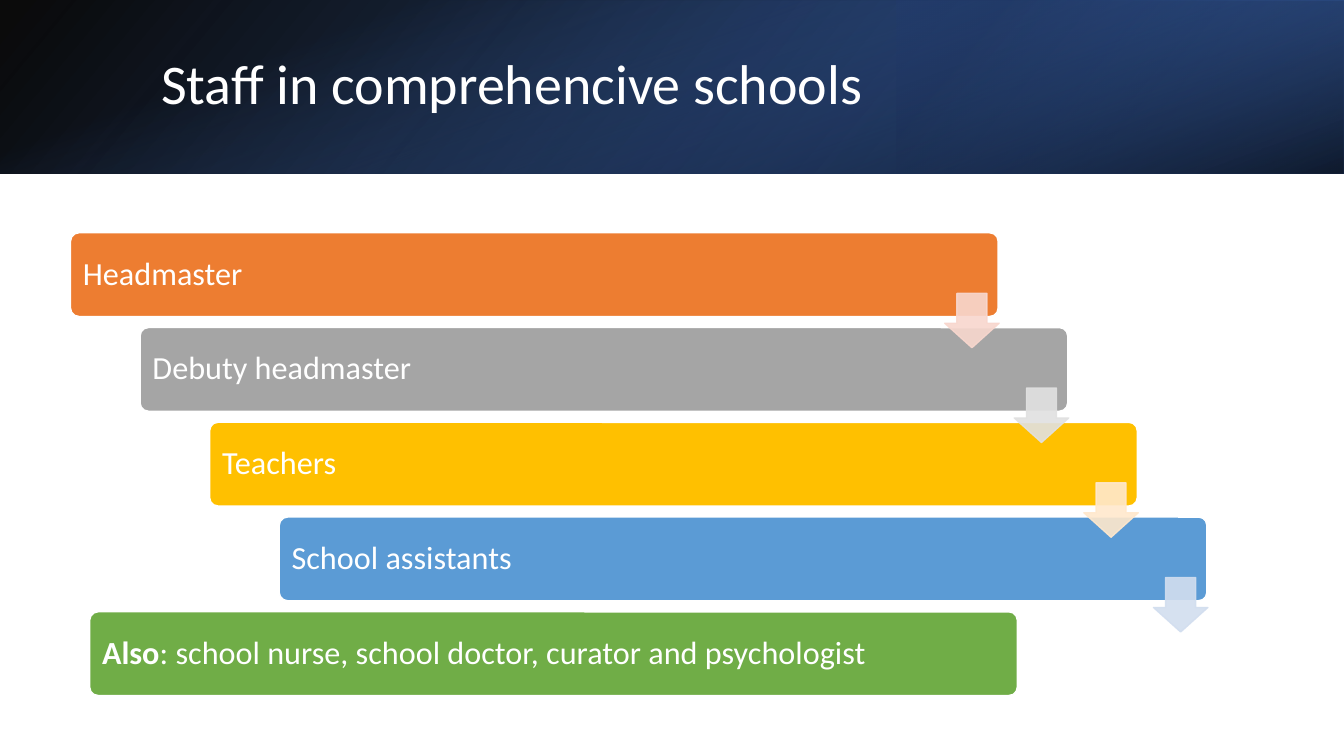
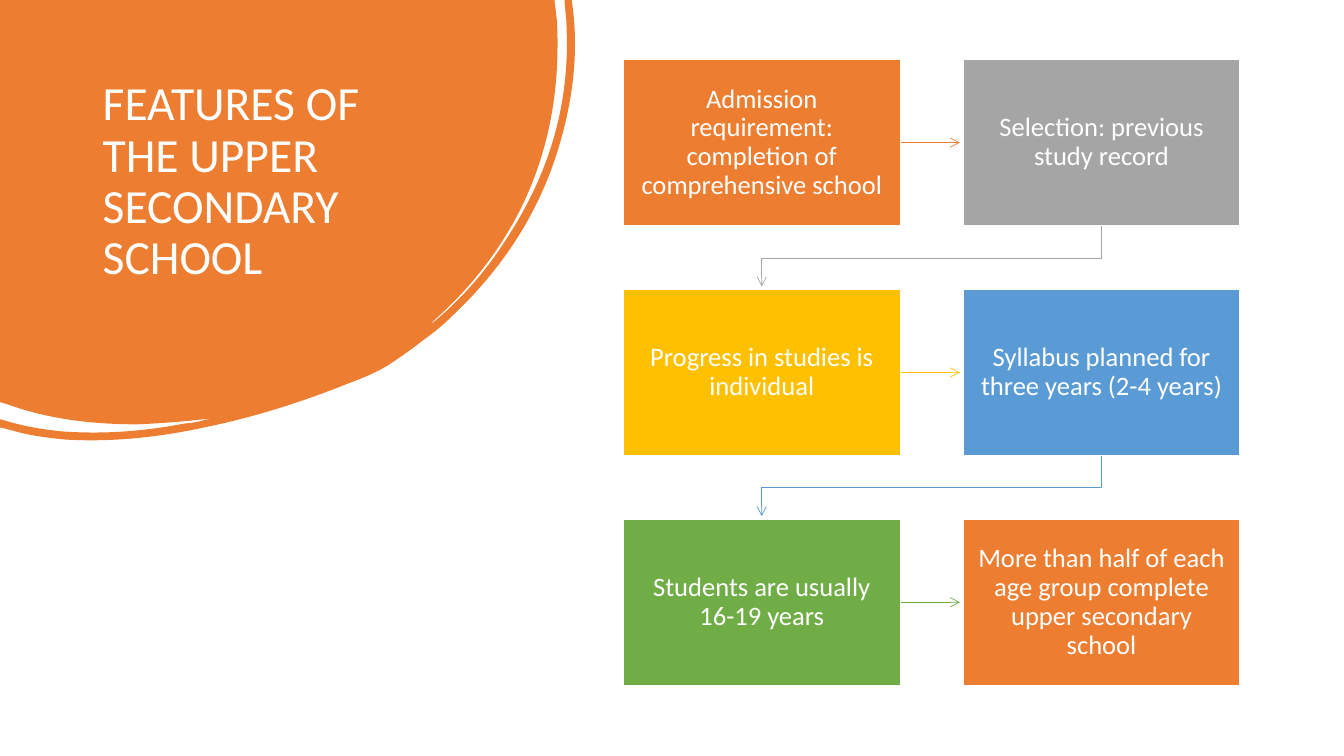
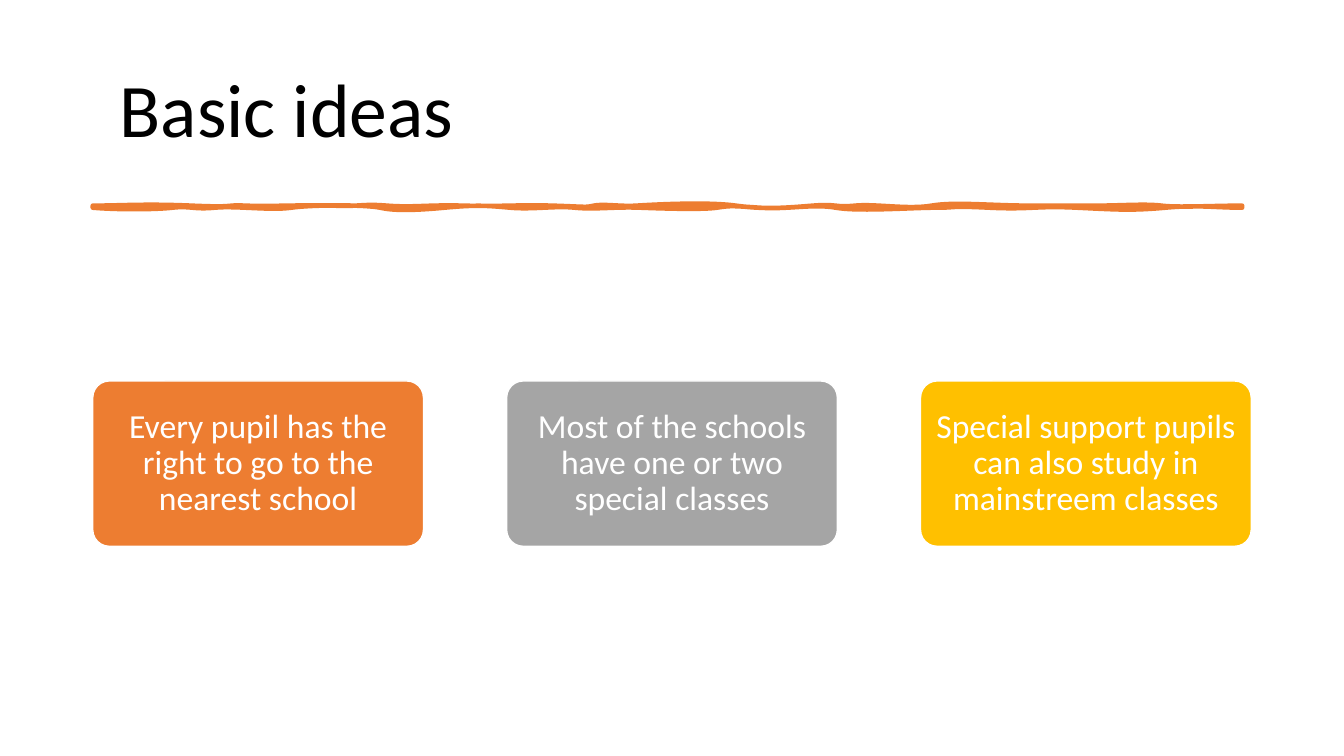
from dataclasses import dataclass

from lxml import etree
from pptx import Presentation
from pptx.dml.color import RGBColor
from pptx.enum.shapes import MSO_SHAPE
from pptx.enum.text import MSO_ANCHOR, PP_ALIGN
from pptx.oxml.ns import qn
from pptx.presentation import Presentation as Deck
from pptx.shapes.autoshape import Shape
from pptx.slide import Slide
from pptx.text.text import TextFrame
from pptx.util import Inches, Pt

RECTANGLE = MSO_SHAPE.RECTANGLE
ROUNDED = MSO_SHAPE.ROUNDED_RECTANGLE
DOWN_ARROW = MSO_SHAPE.DOWN_ARROW
TOP, MIDDLE = MSO_ANCHOR.TOP, MSO_ANCHOR.MIDDLE
LEFT, CENTER = PP_ALIGN.LEFT, PP_ALIGN.CENTER

FONT = "Calibri"
WHITE = RGBColor(0xFF, 0xFF, 0xFF)
BLACK = RGBColor(0x00, 0x00, 0x00)
ORANGE = RGBColor(0xED, 0x7D, 0x31)
GRAY = RGBColor(0xA5, 0xA5, 0xA5)
GOLD = RGBColor(0xFF, 0xC0, 0x00)
BLUE = RGBColor(0x5B, 0x9B, 0xD5)
GREEN = RGBColor(0x70, 0xAD, 0x47)
ROYAL = RGBColor(0x44, 0x72, 0xC4)
DEEP_BLUE = RGBColor(0x2F, 0x55, 0x97)
NAVY = RGBColor(0x20, 0x38, 0x64)
PALE_ORANGE = RGBColor(0xF8, 0xD7, 0xCE)
PALE_GRAY = RGBColor(0xE1, 0xE1, 0xE1)
PALE_GOLD = RGBColor(0xFF, 0xE8, 0xCC)
PALE_BLUE = RGBColor(0xD2, 0xDE, 0xEF)

SLIDE_WIDTH, SLIDE_HEIGHT = 13.33, 7.5
BAND_HEIGHT = 1.72

# A segment is a line (x, y) or a cubic curve (x1, y1, x2, y2, x, y)
Segment = tuple[float, ...]


@dataclass(frozen=True)
class Area:
    left: float
    top: float
    width: float
    height: float


@dataclass(frozen=True)
class Stop:
    position: float
    color: RGBColor
    opacity: int


@dataclass(frozen=True)
class GradientBand:
    area: Area
    start: Stop
    end: Stop
    angle: int
    rotation: int = 0
    flipped: bool = True


@dataclass(frozen=True)
class TextStyle:
    size: int
    color: RGBColor = WHITE
    align: PP_ALIGN = LEFT
    anchor: MSO_ANCHOR = MIDDLE
    margin_x: float = 0.1
    margin_y: float = 0.05


@dataclass(frozen=True)
class Card:
    text: str
    color: RGBColor
    bold_lead: str = ""


STAFF_STYLE = TextStyle(23, margin_y=0.1)
FEATURE_STYLE = TextStyle(19, align=CENTER, margin_x=0.13, margin_y=0.14)
IDEA_STYLE = TextStyle(24, align=CENTER, margin_x=0.05, margin_y=0.03)

BANDS = (
    GradientBand(Area(0, 0, SLIDE_WIDTH, BAND_HEIGHT),
                 Stop(0, BLACK, 96), Stop(1, DEEP_BLUE, 100), 140),
    GradientBand(Area(8.89, 0, 4.44, BAND_HEIGHT),
                 Stop(0.19, NAVY, 68), Stop(1, ROYAL, 79), 320, rotation=180),
    GradientBand(Area(5.8, -5.8, BAND_HEIGHT, SLIDE_WIDTH),
                 Stop(0.23, ROYAL, 0), Stop(0.99, BLACK, 74), 340,
                 rotation=90, flipped=False),
)

STAFF = (
    Card("Headmaster", ORANGE),
    Card("Debuty headmaster", GRAY),
    Card("Teachers", GOLD),
    Card("School assistants", BLUE),
)
ALSO = Card(": school nurse, school doctor, curator and psychologist", GREEN, "Also")
ARROW_COLORS = (PALE_ORANGE, PALE_GRAY, PALE_GOLD, PALE_BLUE)

FEATURES = (
    Card("Admission requirement: completion of comprehensive school", ORANGE),
    Card("Selection: previous study record", GRAY),
    Card("Progress in studies is individual", GOLD),
    Card("Syllabus planned for three years (2-4 years)", BLUE),
    Card("Students are usually 16-19 years", GREEN),
    Card("More than half of each age group complete upper secondary school", ORANGE),
)

IDEAS = (
    Card("Every pupil has the right to go to the nearest school", ORANGE),
    Card("Most of the schools have one or two special classes", GRAY),
    Card("Special support pupils can also study in mainstreem classes", GOLD),
)

BLOB_AREA = Area(0, 0, 5.71, 4.37)
BLOB: tuple[Segment, ...] = (
    (0, 0), (5.5, 0), (5.52, 0.17),
    (5.53, 0.26, 5.53, 0.36, 5.53, 0.45), (5.53, 1.01, 5.42, 1.54, 5.18, 2.04),
    (4.96, 2.49, 4.65, 2.88, 4.27, 3.21), (4.29, 3.21, 4.3, 3.19, 4.32, 3.18),
    (4.59, 2.95, 4.82, 2.69, 5.01, 2.39), (5.43, 1.76, 5.65, 1.07, 5.62, 0.3),
    (5.62, 0.21, 5.61, 0.12, 5.6, 0.03), (5.6, 0), (5.67, 0), (5.68, 0.07),
    (5.74, 0.54, 5.68, 1.02, 5.53, 1.5), (5.33, 2.14, 4.97, 2.68, 4.48, 3.14),
    (4.39, 3.23, 4.29, 3.31, 4.19, 3.38), (4.09, 3.46, 3.99, 3.53, 3.87, 3.61),
    (3.75, 3.69, 3.6, 3.75, 3.44, 3.81), (2.99, 3.99, 2.52, 4.14, 2.03, 4.24),
    (1.57, 4.34, 1.1, 4.39, 0.63, 4.36), (0.45, 4.34, 0.28, 4.32, 0.12, 4.27),
    (0, 4.24), (0, 4.16), (0.04, 4.17),
    (0.23, 4.23, 0.42, 4.26, 0.61, 4.28), (1.03, 4.31, 1.43, 4.28, 1.84, 4.2),
    (1.89, 4.2, 1.93, 4.19, 1.98, 4.18), (2.02, 4.17, 2.06, 4.16, 2.1, 4.15),
    (1.86, 4.18, 1.61, 4.2, 1.36, 4.21), (0.92, 4.21, 0.48, 4.16, 0.07, 4.01),
    (0, 3.99),
)

BRUSH_AREA = Area(0.92, 2.04, 11.4, 0.02)
BRUSH_STROKE: tuple[Segment, ...] = (
    (0.92, 2.04),
    (1.19, 2.04, 1.44, 2.02, 1.9, 2.04), (2.37, 2.06, 2.2, 2.03, 2.44, 2.04),
    (2.67, 2.05, 3.03, 2.03, 3.31, 2.04), (3.6, 2.05, 3.59, 2.02, 3.84, 2.04),
    (4.1, 2.06, 4.23, 2.03, 4.6, 2.04), (4.98, 2.05, 5.14, 2.03, 5.48, 2.04),
    (5.81, 2.05, 5.81, 2.06, 5.89, 2.04), (5.98, 2.02, 6.15, 2.05, 6.31, 2.04),
    (6.47, 2.03, 7.01, 2, 7.3, 2.04), (7.59, 2.08, 7.81, 2.06, 8.06, 2.04),
    (8.31, 2.02, 8.27, 2.06, 8.48, 2.04), (8.68, 2.02, 9.01, 2.08, 9.24, 2.04),
    (9.47, 2, 9.82, 2.04, 10.23, 2.04), (10.63, 2.04, 10.63, 2.04, 10.87, 2.04),
    (11.12, 2.04, 11.36, 2.02, 11.52, 2.04), (11.68, 2.06, 12.03, 2.04, 12.32, 2.04),
    (12.32, 2.05, 12.32, 2.05, 12.32, 2.06),
    (12.05, 2.06, 11.89, 2.03, 11.56, 2.06), (11.22, 2.09, 11.1, 2.08, 10.68, 2.06),
    (10.27, 2.04, 10.23, 2.08, 9.81, 2.06), (9.39, 2.04, 9.52, 2.06, 9.28, 2.06),
    (9.04, 2.06, 8.51, 2.1, 8.29, 2.06), (8.06, 2.02, 7.82, 2.08, 7.53, 2.06),
    (7.24, 2.04, 7.25, 2.04, 7.11, 2.06), (6.98, 2.08, 6.61, 2.07, 6.35, 2.06),
    (6.09, 2.05, 5.9, 2.08, 5.7, 2.06), (5.51, 2.04, 5.28, 2.08, 5.06, 2.06),
    (4.83, 2.04, 4.73, 2.03, 4.41, 2.06), (4.09, 2.09, 3.9, 2.09, 3.77, 2.06),
    (3.63, 2.03, 3.1, 2.03, 2.89, 2.06), (2.68, 2.09, 2.35, 2.04, 2.13, 2.06),
    (1.92, 2.08, 1.89, 2.04, 1.71, 2.06), (1.54, 2.08, 1.14, 2.08, 0.92, 2.06),
    (0.92, 2.05, 0.92, 2.05, 0.92, 2.04),
)


# Shared drawing tools
def add_page(deck: Deck) -> Slide:
    return deck.slides.add_slide(deck.slide_layouts[6])


def write_text(frame: TextFrame, text: str, style: TextStyle, bold_lead: str = "") -> None:
    frame.word_wrap = True
    frame.vertical_anchor = style.anchor
    frame.margin_left = frame.margin_right = Inches(style.margin_x)
    frame.margin_top = frame.margin_bottom = Inches(style.margin_y)
    para = frame.paragraphs[0]
    para.alignment = style.align
    para.line_spacing = 0.9
    para.font.name = FONT
    para.font.size = Pt(style.size)
    para.font.color.rgb = style.color
    if bold_lead:
        span = para.add_run()
        span.text = bold_lead
        span.font.bold = True
    para.add_run().text = text


def add_title(page: Slide, text: str, area: Area, style: TextStyle) -> None:
    box = page.shapes.add_textbox(Inches(area.left), Inches(area.top),
                                  Inches(area.width), Inches(area.height))
    write_text(box.text_frame, text, style)


def add_shape(page: Slide, kind: MSO_SHAPE, area: Area) -> Shape:
    shape = page.shapes.add_shape(kind, Inches(area.left), Inches(area.top),
                                  Inches(area.width), Inches(area.height))
    shape.shadow.inherit = False
    return shape


def paint(shape: Shape, fill: RGBColor, line: RGBColor, line_width: float = 1) -> None:
    shape.fill.solid()
    shape.fill.fore_color.rgb = fill
    shape.line.color.rgb = line
    shape.line.width = Pt(line_width)


def set_opacity(shape: Shape, *percents: int) -> None:
    colors = shape._element.spPr.iter(qn("a:srgbClr"))
    for color, percent in zip(list(colors), percents):
        etree.SubElement(color, qn("a:alpha")).set("val", str(percent * 1000))


def add_card(page: Slide, kind: MSO_SHAPE, area: Area, card: Card, style: TextStyle) -> None:
    box = add_shape(page, kind, area)
    if kind == ROUNDED:
        box.adjustments[0] = 0.1
    paint(box, card.color, WHITE)
    write_text(box.text_frame, card.text, style, card.bold_lead)


def add_outline(page: Slide, segments: tuple[Segment, ...], area: Area,
                closed: bool = True) -> Shape:
    """Draw lines and cubic curves in a frame of the given area."""
    start, *rest = [(Inches(segment[-2]), Inches(segment[-1])) for segment in segments]
    builder = page.shapes.build_freeform(*start)
    builder.add_line_segments(rest, close=closed)
    shape = builder.convert_to_shape()
    shape.shadow.inherit = False
    shape.left, shape.top = Inches(area.left), Inches(area.top)
    shape.width, shape.height = Inches(area.width), Inches(area.height)

    # Rewrite the commands so that curves stay curves
    outline = next(shape._element.spPr.iter(qn("a:path")))
    outline.set("w", str(shape.width))
    outline.set("h", str(shape.height))
    for command, segment in zip(list(outline), segments):
        if len(segment) == 6:
            command.tag = qn("a:cubicBezTo")
        for point in list(command):
            command.remove(point)
        for x, y in zip(segment[::2], segment[1::2]):
            point = etree.SubElement(command, qn("a:pt"))
            point.set("x", str(Inches(x) - shape.left))
            point.set("y", str(Inches(y) - shape.top))
    return shape


# Staff slide
def add_band(page: Slide, band: GradientBand) -> None:
    shape = add_shape(page, RECTANGLE, band.area)
    shape.rotation = band.rotation
    if band.flipped:
        shape._element.spPr.xfrm.set("flipH", "1")
    shape.fill.gradient()
    shape.fill.gradient_angle = 360 - band.angle
    for stop, wanted in zip(shape.fill.gradient_stops, (band.start, band.end)):
        stop.position = wanted.position
        stop.color.rgb = wanted.color
    set_opacity(shape, band.start.opacity, band.end.opacity)
    shape.line.fill.background()


def build_staff(deck: Deck) -> None:
    page = add_page(deck)
    for band in BANDS:
        add_band(page, band)
    add_title(page, "Staff in comprehencive schools", Area(1.5, 0.38, 10.98, 0.96),
              TextStyle(40))

    # Stepped bars, then the arrows on top of them
    steps = [(0.7 + 0.69 * row, 2.31 + 0.94 * row) for row in range(len(STAFF))]
    places = [*steps, (0.89, 6.07)]
    for card, (left, top) in zip((*STAFF, ALSO), places):
        add_card(page, ROUNDED, Area(left, top, 9.2, 0.83), card, STAFF_STYLE)
    for color, (left, top) in zip(ARROW_COLORS, steps):
        arrow = add_shape(page, DOWN_ARROW, Area(left + 8.67, top + 0.6, 0.54, 0.54))
        arrow.adjustments[0] = 0.55
        arrow.adjustments[1] = 0.45
        paint(arrow, color, color)
        set_opacity(arrow, 90, 90)


# Upper secondary school slide
def add_flow_arrow(page: Slide, corners: tuple[Segment, ...], area: Area,
                   color: RGBColor) -> None:
    arrow = add_outline(page, corners, area, closed=False)
    arrow.fill.background()
    arrow.line.color.rgb = color
    arrow.line.width = Pt(0.5)
    line = arrow._element.spPr.find(qn("a:ln"))
    etree.SubElement(line, qn("a:tailEnd")).set("type", "arrow")


def build_features(deck: Deck) -> None:
    page = add_page(deck)
    blob = add_outline(page, BLOB, BLOB_AREA)
    blob.fill.solid()
    blob.fill.fore_color.rgb = ORANGE
    blob.line.fill.background()
    add_title(page, "FEATURES OF THE UPPER SECONDARY SCHOOL", Area(0.92, 0.74, 3.52, 2.22),
              TextStyle(34, anchor=TOP))

    # Two columns of boxes, each leading to the next
    width, height = 2.75, 1.65
    lefts = (6.18, 9.55)
    row_pitch, reach = 2.28, 0.6
    for index, card in enumerate(FEATURES):
        row, column = divmod(index, 2)
        left, top = lefts[column], 0.59 + row * row_pitch
        bottom = top + height
        if column == 0:
            start, middle = left + width - 0.01, top + height / 2
            add_flow_arrow(page, ((start, middle), (start + reach, middle)),
                           Area(start, middle - 0.05, reach, 0.1), card.color)
        elif index < len(FEATURES) - 1:
            start, end = left + width / 2, lefts[0] + width / 2
            bend = bottom + 0.32
            add_flow_arrow(page, ((start, bottom), (start, bend), (end, bend),
                                  (end, bottom + reach)),
                           Area(end, bottom, start - end, reach), card.color)
        add_card(page, RECTANGLE, Area(left, top, width, height), card, FEATURE_STYLE)


# Basic ideas slide
def build_ideas(deck: Deck) -> None:
    page = add_page(deck)
    add_title(page, "Basic ideas", Area(1.09, 0.4, 11.33, 1.45), TextStyle(54, BLACK))
    paint(add_outline(page, BRUSH_STROKE, BRUSH_AREA), ORANGE, ORANGE, 3.25)
    first_left, last_left = 0.92, 9.13
    pitch = (last_left - first_left) / (len(IDEAS) - 1)
    for column, card in enumerate(IDEAS):
        add_card(page, ROUNDED, Area(first_left + pitch * column, 3.78, 3.28, 1.64),
                 card, IDEA_STYLE)


def main() -> None:
    deck = Presentation()
    deck.slide_width = Inches(SLIDE_WIDTH)
    deck.slide_height = Inches(SLIDE_HEIGHT)
    build_staff(deck)
    build_features(deck)
    build_ideas(deck)
    deck.save("out.pptx")


if __name__ == "__main__":
    main()
